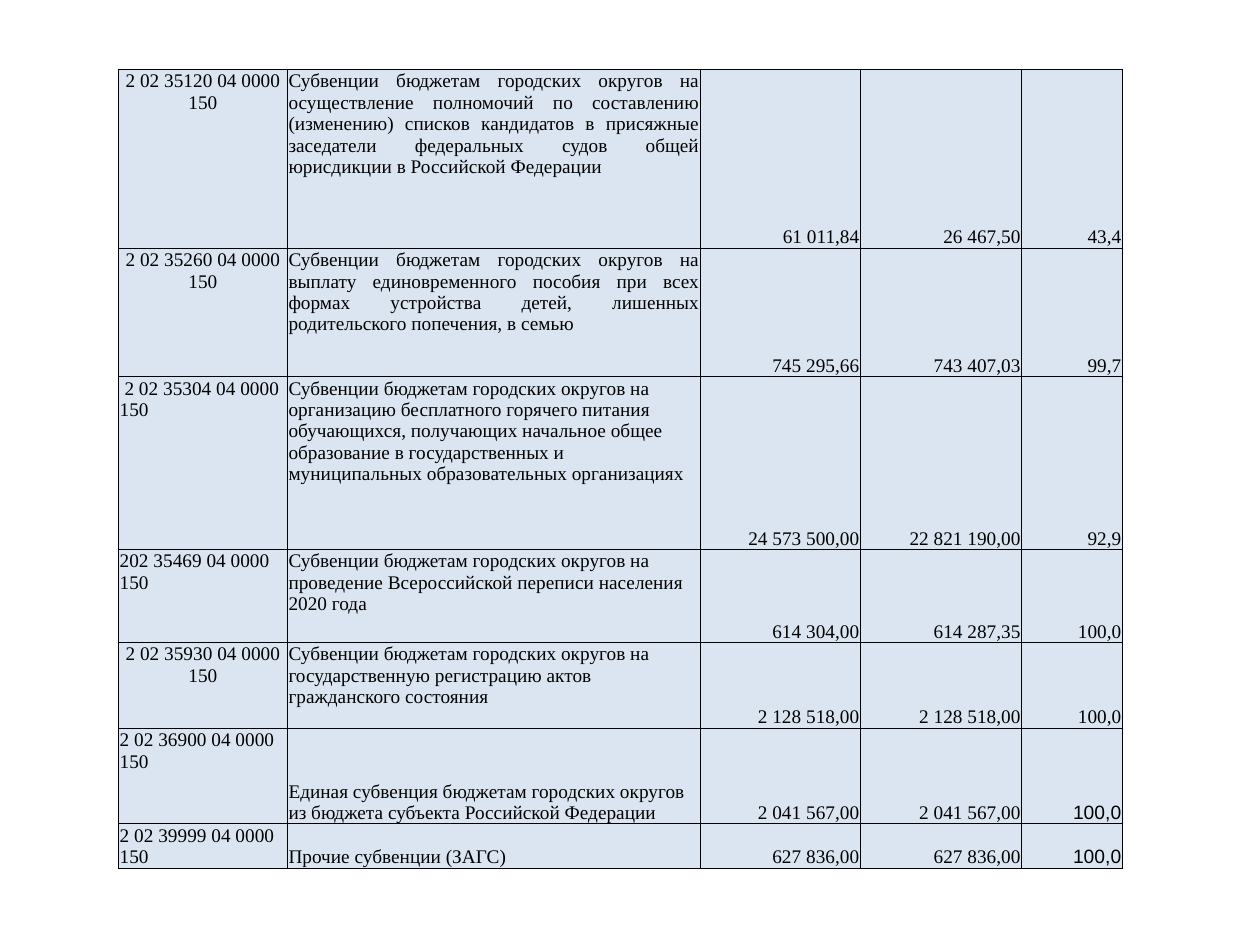
from lxml import etree
from pptx import Presentation
from pptx.dml.color import RGBColor
from pptx.enum.text import MSO_ANCHOR, PP_ALIGN
from pptx.oxml.ns import qn
from pptx.util import Inches, Pt

LEFT, CENTER, RIGHT, JUSTIFY = PP_ALIGN.LEFT, PP_ALIGN.CENTER, PP_ALIGN.RIGHT, PP_ALIGN.JUSTIFY
TOP, BOTTOM = MSO_ANCHOR.TOP, MSO_ANCHOR.BOTTOM
COLORS = {"fill": "DBE5F1", "text": "000000", "border": "000000"}
SERIF, SANS = "Times New Roman", "Arial"

COLUMN_WIDTHS = [1.34, 3.28, 1.27, 1.28, 0.8]
# Row height, code alignment, name alignment, name anchor, percent font, cell texts
ROWS = [
    (1.42, CENTER, JUSTIFY, TOP, SERIF,
     ["2 02 35120 04 0000 150",
      "Субвенции бюджетам городских округов на осуществление полномочий по составлению "
      "(изменению) списков кандидатов в присяжные заседатели федеральных судов общей "
      "юрисдикции в Российской Федерации",
      "61 011,84", "26 467,50", "43,4"]),
    (1.02, CENTER, JUSTIFY, TOP, SERIF,
     ["2 02 35260 04 0000 150",
      "Субвенции бюджетам городских округов на выплату единовременного пособия при всех "
      "формах устройства детей, лишенных родительского попечения, в семью",
      "745 295,66", "743 407,03", "99,7"]),
    (1.37, LEFT, LEFT, TOP, SERIF,
     [" 2 02 35304 04 0000 150",
      "Субвенции бюджетам городских округов на организацию бесплатного горячего питания "
      "обучающихся, получающих начальное общее образование в государственных и "
      "муниципальных образовательных организациях",
      "24 573 500,00", "22 821 190,00", "92,9"]),
    (0.74, LEFT, LEFT, TOP, SERIF,
     ["202 35469 04 0000 150",
      "Субвенции бюджетам городских округов на проведение Всероссийской переписи "
      "населения 2020 года",
      "614 304,00", "614 287,35", "100,0"]),
    (0.68, CENTER, LEFT, TOP, SERIF,
     ["2 02 35930 04 0000 150",
      "Субвенции бюджетам городских округов на государственную регистрацию актов "
      "гражданского состояния",
      "2 128 518,00", "2 128 518,00", "100,0"]),
    (0.76, LEFT, LEFT, BOTTOM, SANS,
     ["2 02 36900 04 0000 150",
      "Единая субвенция бюджетам городских округов из бюджета субъекта Российской Федерации",
      "2 041 567,00", "2 041 567,00", "100,0"]),
    (0.34, LEFT, LEFT, BOTTOM, SANS,
     ["2 02 39999 04 0000 150", "Прочие субвенции (ЗАГС)",
      "627 836,00", "627 836,00", "100,0"]),
]


def add_borders(cell):
    properties = cell._tc.get_or_add_tcPr()
    for position, side in enumerate(("lnL", "lnR", "lnT", "lnB")):
        line = etree.Element(qn(f"a:{side}"), w=str(Pt(0.5)))
        fill = etree.SubElement(line, qn("a:solidFill"))
        etree.SubElement(fill, qn("a:srgbClr"), val=COLORS["border"])
        properties.insert(position, line)  # borders come before the fill


presentation = Presentation()
presentation.slide_width, presentation.slide_height = Inches(10), Inches(7.5)
slide = presentation.slides.add_slide(presentation.slide_layouts[6])

# Table of subventions: code, name, plan, actual, percent
table = slide.shapes.add_table(
    len(ROWS), len(COLUMN_WIDTHS), Inches(0.94), Inches(0.55),
    Inches(sum(COLUMN_WIDTHS)), Inches(sum(row[0] for row in ROWS))).table
table.first_row = table.horz_banding = False
for column, width in zip(table.columns, COLUMN_WIDTHS):
    column.width = Inches(width)

# Cells
for row, (height, code_align, name_align, name_anchor, percent_font, texts) in zip(table.rows, ROWS):
    row.height = Inches(height)
    alignments = [code_align, name_align, RIGHT, RIGHT, RIGHT]
    anchors = [TOP, name_anchor, BOTTOM, BOTTOM, BOTTOM]
    fonts = [SERIF] * 4 + [percent_font]
    for cell, text, alignment, anchor, font in zip(row.cells, texts, alignments, anchors, fonts):
        cell.margin_left = cell.margin_right = cell.margin_top = Inches(0.01)
        cell.margin_bottom = 0
        cell.vertical_anchor = anchor
        cell.fill.solid()
        cell.fill.fore_color.rgb = RGBColor.from_string(COLORS["fill"])
        add_borders(cell)
        cell.text = text
        paragraph = cell.text_frame.paragraphs[0]
        paragraph.alignment = alignment
        paragraph.font.name = font
        paragraph.font.size = Pt(11)
        paragraph.font.color.rgb = RGBColor.from_string(COLORS["text"])

presentation.save("out.pptx")
